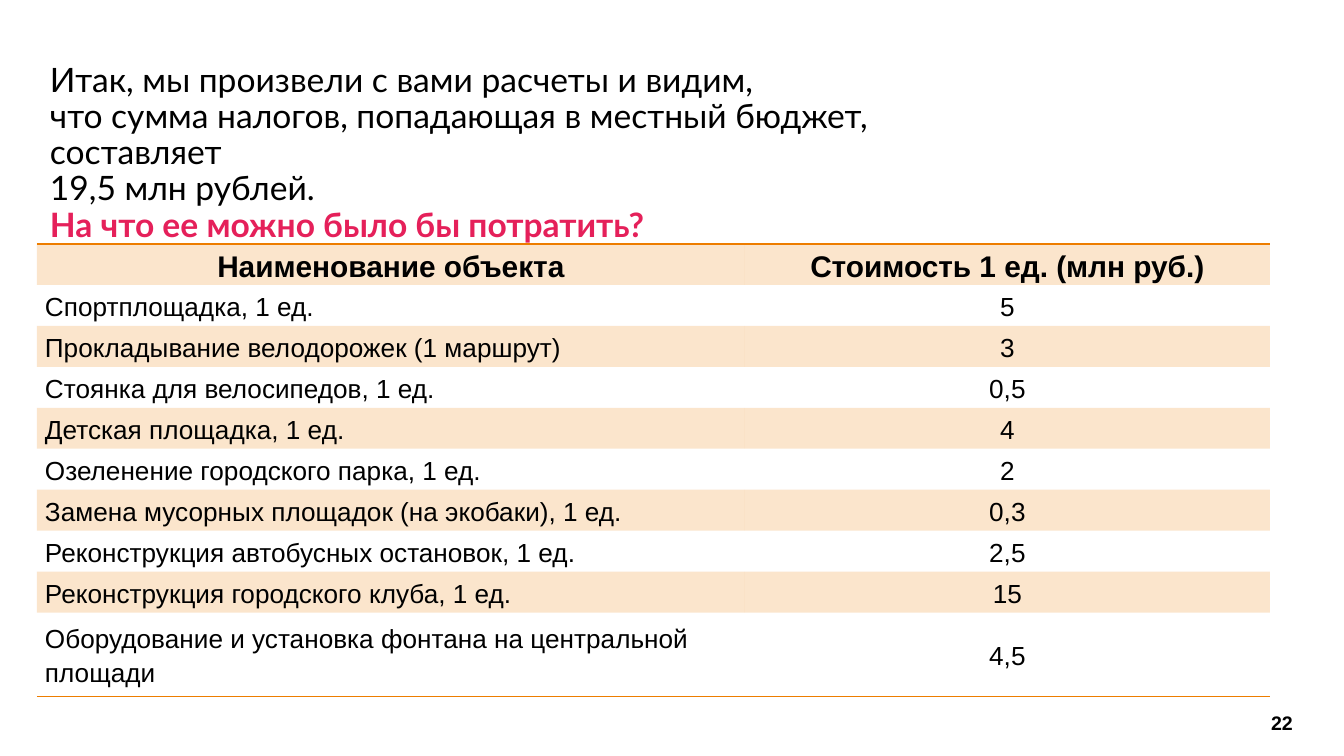
from dataclasses import dataclass

from lxml import etree
from pptx import Presentation
from pptx.dml.color import RGBColor
from pptx.enum.text import MSO_ANCHOR, MSO_AUTO_SIZE, PP_ALIGN
from pptx.oxml.ns import qn
from pptx.util import Pt

LEFT, CENTER = PP_ALIGN.LEFT, PP_ALIGN.CENTER
TOP, MIDDLE = MSO_ANCHOR.TOP, MSO_ANCHOR.MIDDLE
NO_AUTOSIZE = MSO_AUTO_SIZE.NONE
SLIDE_WIDTH, SLIDE_HEIGHT = 1344, 756
EMU_PER_PX = 9144000 / SLIDE_WIDTH


@dataclass(frozen=True)
class Theme:
    text: str = "000000"
    question: str = "E5205A"
    accent: str = "ED7D00"
    band_opacity: int = 20
    title_font: str = "Lato"
    body_font: str = "Arial"
    title_size: float = 18
    header_size: float = 16
    body_size: float = 14
    number_size: float = 10.5
    rule_width: float = 1


THEME = Theme()

TITLE_LINES = [
    "Итак, мы произвели с вами расчеты и видим,",
    "что сумма налогов, попадающая в местный бюджет, составляет",
    "19,5 млн рублей.",
]
QUESTION = "На что ее можно было бы потратить?"

COST_ROWS = [
    ("Наименование объекта", "Стоимость 1 ед. (млн руб.)"),
    ("Спортплощадка, 1 ед.", "5"),
    ("Прокладывание велодорожек (1 маршрут)", "3"),
    ("Стоянка для велосипедов, 1 ед.", "0,5"),
    ("Детская площадка, 1 ед.", "4"),
    ("Озеленение городского парка, 1 ед.", "2"),
    ("Замена мусорных площадок (на экобаки), 1 ед.", "0,3"),
    ("Реконструкция автобусных остановок, 1 ед.", "2,5"),
    ("Реконструкция городского клуба, 1 ед.", "15"),
    ("Оборудование и установка фонтана на центральной площади", "4,5"),
]
COLUMN_WIDTHS = [708, 525]
ROW_HEIGHT, LAST_ROW_HEIGHT = 41, 84


def px(length):
    return round(length * EMU_PER_PX)


def apply_format(target, values):
    for name, value in values.items():
        setattr(target, name, value)


def set_margins(target, horizontal, vertical):
    apply_format(target, {
        "margin_left": px(horizontal), "margin_right": px(horizontal),
        "margin_top": px(vertical), "margin_bottom": px(vertical),
    })


def add_run(paragraph, text, font, size, color=THEME.text, bold=False):
    run = paragraph.add_run()
    run.text = text
    apply_format(run.font, {"name": font, "size": Pt(size), "bold": bold})
    run.font.color.rgb = RGBColor.from_string(color)


def add_text_box(slide, box, margins, anchor, alignment, line_spacing):
    """Add an empty text box and return its paragraph."""
    frame = slide.shapes.add_textbox(*map(px, box)).text_frame
    apply_format(frame, {"word_wrap": True, "auto_size": NO_AUTOSIZE,
                         "vertical_anchor": anchor})
    set_margins(frame, *margins)
    paragraph = frame.paragraphs[0]
    apply_format(paragraph, {"alignment": alignment, "line_spacing": line_spacing})
    return paragraph


def fill_band(cell):
    cell.fill.solid()
    cell.fill.fore_color.rgb = RGBColor.from_string(THEME.accent)
    color = cell._tc.tcPr.find(".//" + qn("a:srgbClr"))
    etree.SubElement(color, qn("a:alpha"), val=str(THEME.band_opacity * 1000))


def set_borders(cell, ruled_sides):
    """Draw the ruled sides and clear the others; borders go before the fill."""
    properties = cell._tc.get_or_add_tcPr()
    for position, side in enumerate("LRTB"):
        line = etree.Element(qn(f"a:ln{side}"), w=str(Pt(THEME.rule_width)))
        if side in ruled_sides:
            fill = etree.SubElement(line, qn("a:solidFill"))
            etree.SubElement(fill, qn("a:srgbClr"), val=THEME.accent)
        else:
            etree.SubElement(line, qn("a:noFill"))
        properties.insert(position, line)


def add_title(slide):
    paragraph = add_text_box(slide, (37, 56, 937, 233), (13, 7), TOP, LEFT, 0.9)
    for line in TITLE_LINES:
        add_run(paragraph, line, THEME.title_font, THEME.title_size)
        paragraph.add_line_break()
    add_run(paragraph, QUESTION, THEME.title_font, THEME.title_size,
            THEME.question, bold=True)


def add_cost_table(slide):
    last = len(COST_ROWS) - 1
    box = (37, 244, sum(COLUMN_WIDTHS), ROW_HEIGHT * last + LAST_ROW_HEIGHT)
    table = slide.shapes.add_table(
        len(COST_ROWS), len(COLUMN_WIDTHS), *map(px, box)).table
    apply_format(table, {"first_row": False, "horz_banding": False})
    for column, width in zip(table.columns, COLUMN_WIDTHS):
        column.width = px(width)

    for row_index, texts in enumerate(COST_ROWS):
        header = row_index == 0
        table.rows[row_index].height = px(
            LAST_ROW_HEIGHT if row_index == last else ROW_HEIGHT)
        ruled_sides = {0: "T", last: "B"}.get(row_index, "")
        for column_index, text in enumerate(texts):
            cell = table.cell(row_index, column_index)
            cell.vertical_anchor = MIDDLE
            set_margins(cell, 8, 0)
            paragraph = cell.text_frame.paragraphs[0]
            centered = header or column_index > 0
            apply_format(paragraph, {"alignment": CENTER if centered else LEFT,
                                     "line_spacing": 1.15})
            add_run(paragraph, text, THEME.body_font,
                    THEME.header_size if header else THEME.body_size, bold=header)
            # Every other row is tinted, starting with the header
            if row_index % 2 == 0:
                fill_band(cell)
            else:
                cell.fill.background()
            set_borders(cell, ruled_sides)


def add_slide_number(slide):
    paragraph = add_text_box(slide, (1228, 703, 108, 40), (8, 8), MIDDLE, CENTER, 1.0)
    add_run(paragraph, "22", THEME.body_font, THEME.number_size, bold=True)


def main():
    presentation = Presentation()
    apply_format(presentation, {"slide_width": px(SLIDE_WIDTH),
                                "slide_height": px(SLIDE_HEIGHT)})
    slide = presentation.slides.add_slide(presentation.slide_layouts[6])
    add_cost_table(slide)
    add_title(slide)
    add_slide_number(slide)
    presentation.save("out.pptx")


if __name__ == "__main__":
    main()
